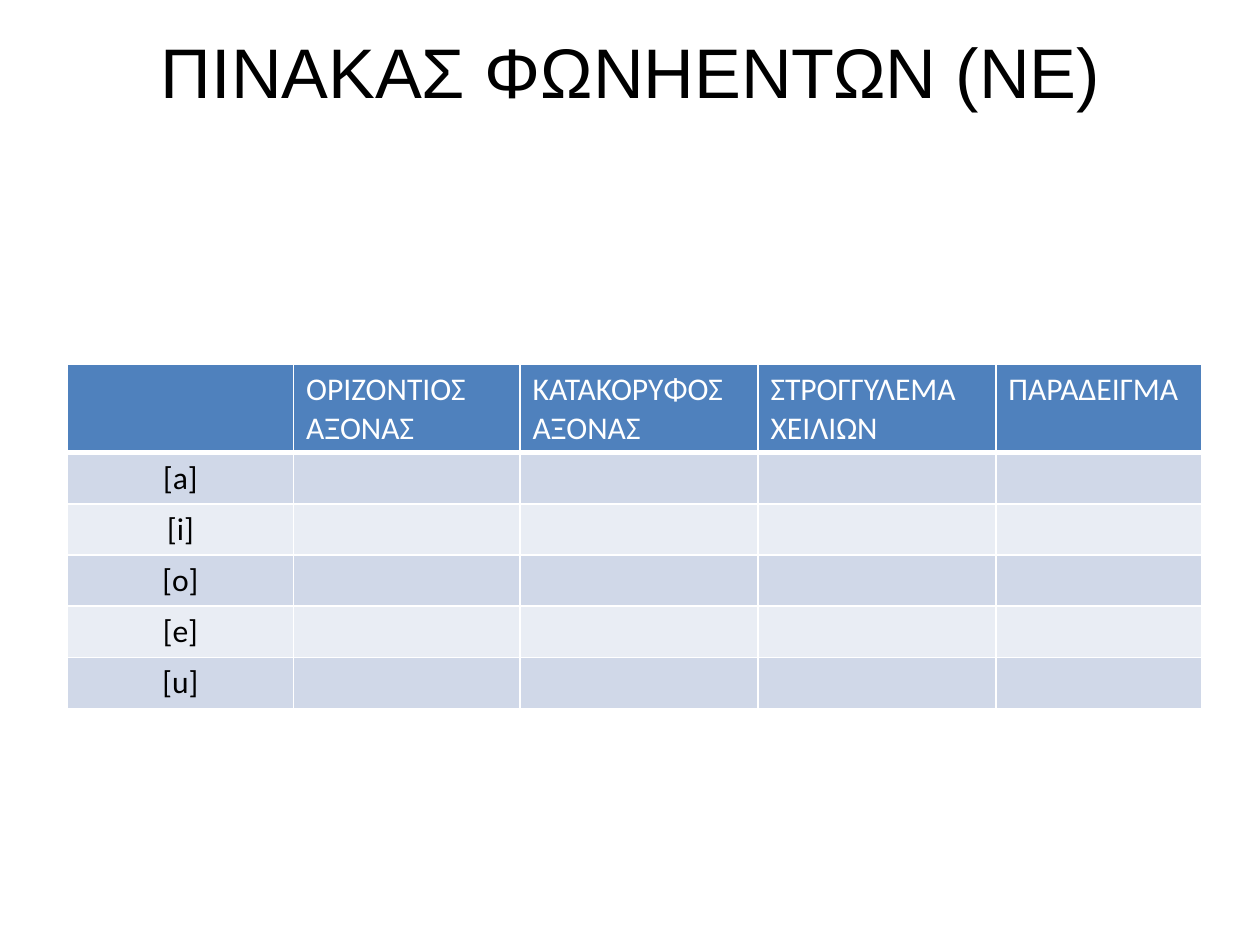
from dataclasses import dataclass

from lxml import etree
from pptx import Presentation
from pptx.dml.color import RGBColor
from pptx.enum.text import MSO_ANCHOR, PP_ALIGN
from pptx.oxml.ns import qn
from pptx.util import Cm, Pt

CENTER, LEFT = PP_ALIGN.CENTER, PP_ALIGN.LEFT
MIDDLE = MSO_ANCHOR.MIDDLE


@dataclass(frozen=True)
class Theme:
    black: str = "000000"
    white: str = "FFFFFF"
    head: str = "4F81BD"
    bands: tuple = ("D0D8E8", "E9EDF4")
    title_font: str = "Arial"
    body_font: str = "Calibri"
    title_size: int = 40
    body_size: int = 18
    thin: int = 1
    thick: int = 3


THEME = Theme()
TITLE = "ΠΙΝΑΚΑΣ ΦΩΝΗΕΝΤΩΝ (ΝΕ)"
HEADS = ["", "ΟΡΙΖΟΝΤΙΟΣ ΑΞΟΝΑΣ", "ΚΑΤΑΚΟΡΥΦΟΣ ΑΞΟΝΑΣ",
         "ΣΤΡΟΓΓΥΛΕΜΑ ΧΕΙΛΙΩΝ", "ΠΑΡΑΔΕΙΓΜΑ"]
VOWELS = ["[a]", "[i]", "[o]", "[e]", "[u]"]
SHARES = [4.55, 4.55, 4.78, 4.78, 4.14]  # relative column widths


def style(par, font, size, color, align):
    par.alignment = align
    for run in par.runs:
        run.font.name = font
        run.font.size = Pt(size)
        run.font.bold = False
        run.font.color.rgb = RGBColor.from_string(color)


def edge(cell, side, width):
    line = etree.SubElement(cell._tc.get_or_add_tcPr(), qn("a:ln" + side),
                            w=str(Pt(width)))
    fill = etree.SubElement(line, qn("a:solidFill"))
    etree.SubElement(fill, qn("a:srgbClr"), val=THEME.white)


def add_title(slide, left, top, width, height):
    box = slide.shapes.add_textbox(Cm(left), Cm(top), Cm(width), Cm(height))
    frame = box.text_frame
    frame.word_wrap = True
    frame.vertical_anchor = MIDDLE
    frame.margin_left = frame.margin_right = 0
    frame.margin_top = frame.margin_bottom = 0
    frame.text = TITLE
    style(frame.paragraphs[0], THEME.title_font, THEME.title_size,
          THEME.black, CENTER)


def fill_cell(cell, text, row):
    # Borders, with a heavier rule under the header
    for side in "LRTB":
        heavy = (row, side) in ((0, "B"), (1, "T"))
        edge(cell, side, THEME.thick if heavy else THEME.thin)

    # Header or banded fill
    color = THEME.bands[(row - 1) % 2] if row else THEME.head
    cell.fill.solid()
    cell.fill.fore_color.rgb = RGBColor.from_string(color)

    # Text
    if text:
        cell.text_frame.text = text
        style(cell.text_frame.paragraphs[0], THEME.body_font,
              THEME.body_size, THEME.black if row else THEME.white,
              CENTER if row else LEFT)


def add_grid(slide, left, top, width, height, head=1.78):
    rows = [HEADS] + [[vowel] + [""] * (len(HEADS) - 1) for vowel in VOWELS]
    frame = slide.shapes.add_table(len(rows), len(HEADS), Cm(left), Cm(top),
                                   Cm(width), Cm(height))
    table = frame.table
    table.first_row = table.horz_banding = False

    # Column widths and row heights
    for col, share in zip(table.columns, SHARES):
        col.width = Cm(width * share / sum(SHARES))
    body = (height - head) / len(VOWELS)
    for i, line in enumerate(table.rows):
        line.height = Cm(body if i else head)

    # Cells
    for i, row in enumerate(rows):
        for j, text in enumerate(row):
            fill_cell(table.cell(i, j), text, i)


def main():
    deck = Presentation()
    deck.slide_width, deck.slide_height = Cm(25.32), Cm(19.02)
    slide = deck.slides.add_slide(deck.slide_layouts[6])
    add_title(slide, 2.16, 0.56, 21.03, 1.7)
    add_grid(slide, 1.35, 7.32, 22.8, 6.93)
    deck.save("out.pptx")


if __name__ == "__main__":
    main()
